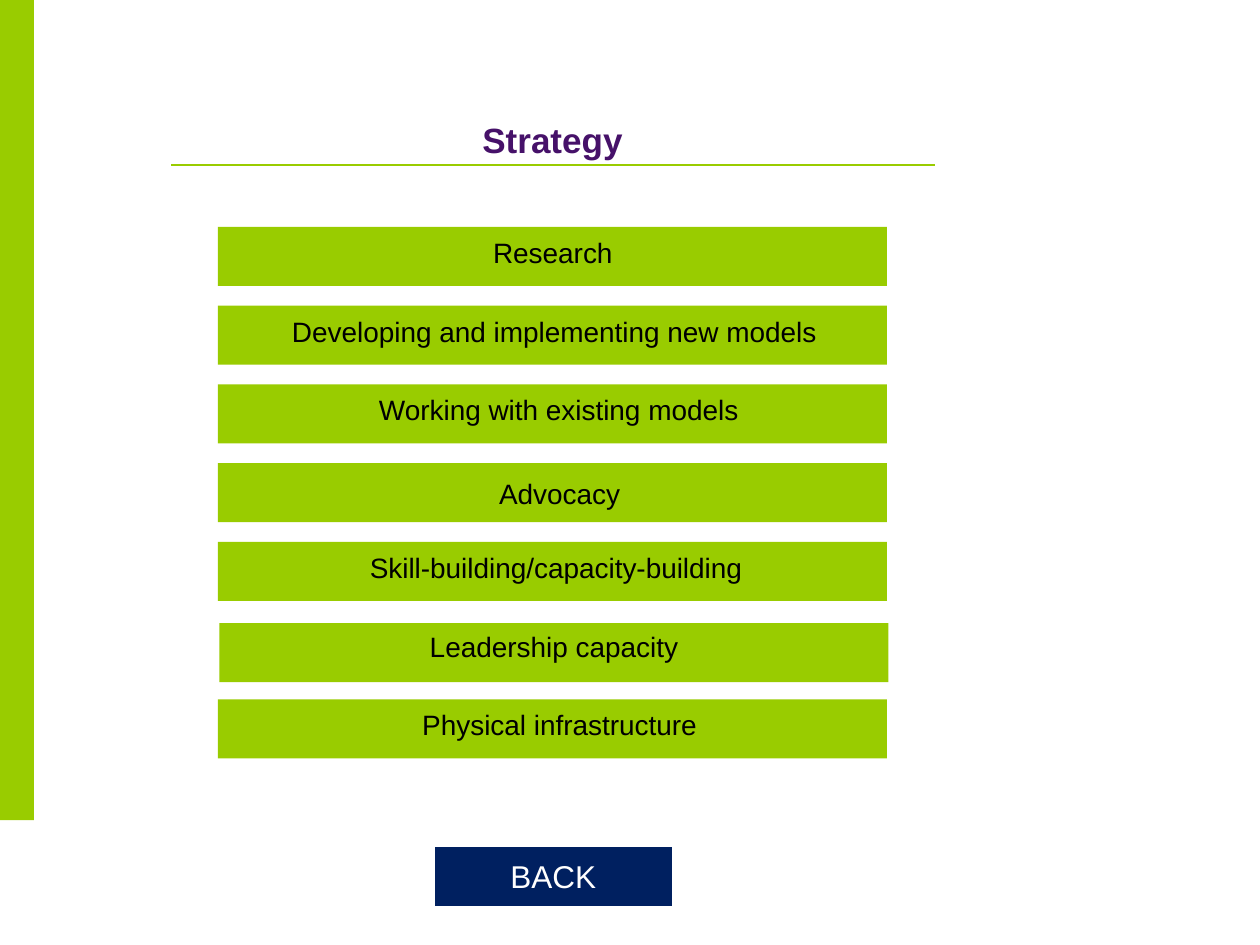
from pptx import Presentation
from pptx.dml.color import RGBColor
from pptx.enum.shapes import MSO_CONNECTOR as Line, MSO_SHAPE as Shape
from pptx.enum.text import MSO_ANCHOR as Anchor, MSO_AUTO_SIZE as Auto, PP_ALIGN as Align
from pptx.oxml.ns import qn
from pptx.util import Inches, Pt
from lxml import etree

LIME = RGBColor(0x99, 0xCC, 0x00)
PLUM = RGBColor(0x46, 0x11, 0x69)
NAVY = RGBColor(0x00, 0x20, 0x60)
BLACK = RGBColor(0, 0, 0)
WHITE = RGBColor(255, 255, 255)

WIDE, HIGH = 10, 7.5
LEFT, TOP, BAR_W, BAR_H, PITCH = 1.73, 1.8, 5.31, 0.47, HIGH / 12
TITLE = "Strategy"
BACK = "BACK"
ROWS = [
    ("Research", 3.81, 1.15, 0, (0, 0)),
    ("Developing and implementing new models", 2.2, 4.38, 0, (0, 0)),
    ("Working with existing models", 2.81, 3.15, 0, (0, 0)),
    ("Advocacy", 3.75, 1.27, 0.04, (0, 0)),
    ("Skill-building/capacity-building", 2.79, 3.2, 0, (0, 0)),
    ("Leadership capacity", 3.29, 2.19, 0, (0.01, 0.02)),
    ("Physical infrastructure", 3.15, 2.48, 0, (0, 0)),
]

deck = Presentation()
deck.slide_width, deck.slide_height = Inches(WIDE), Inches(HIGH)
slide = deck.slides.add_slide(deck.slide_layouts[6])


def block(kind, x, y, w, h, fill):
    shape = slide.shapes.add_shape(kind, *map(Inches, (x, y, w, h)))
    shape.shadow.inherit = False
    shape.fill.solid()
    shape.fill.fore_color.rgb = fill
    shape.line.fill.background()
    return shape


def write(shape, text, size, color, align, bold=False):
    para = shape.text_frame.paragraphs[0]
    para.text = text
    para.alignment = align
    para._p.get_or_add_pPr().set("rtl", "1")
    font = para.font
    font.name, font.size, font.bold = "Arial", Pt(size), bold
    font.color.rgb = color


def label(x, y, w, h, text, size, color, bold=False):
    box = slide.shapes.add_textbox(*map(Inches, (x, y, w, h)))
    frame = box.text_frame
    frame.word_wrap = True
    frame.auto_size = Auto.SHAPE_TO_FIT_TEXT
    write(box, text, size, color, Align.RIGHT, bold)
    return frame


block(Shape.RECTANGLE, 0, 0, 0.27, 6.51, LIME)

rule = slide.shapes.add_connector(Line.STRAIGHT, *map(Inches, (1.36, 1.31, 7.42, 1.31)))
rule.line.color.rgb = LIME
rule.line.width = Pt(0.75)
etree.SubElement(rule._element.spPr, qn("a:effectLst"))

head = label(3.63, 0.89, 1.41, 0.43, TITLE, 20, PLUM, bold=True)
head.vertical_anchor = Anchor.MIDDLE

for row, (text, x, w, drop, (dx, dy)) in enumerate(ROWS):
    y = TOP + row * PITCH
    block(Shape.RECTANGLE, LEFT + dx, y + dy, BAR_W, BAR_H, LIME)
    label(x, y + 0.02 + drop, w, 0.37, text, 16, BLACK)

button = block(Shape.ACTION_BUTTON_CUSTOM, 3.45, 6.72, 1.88, BAR_H, NAVY)
button.text_frame.vertical_anchor = Anchor.MIDDLE
write(button, BACK, 18, WHITE, Align.CENTER)

deck.save("out.pptx")
